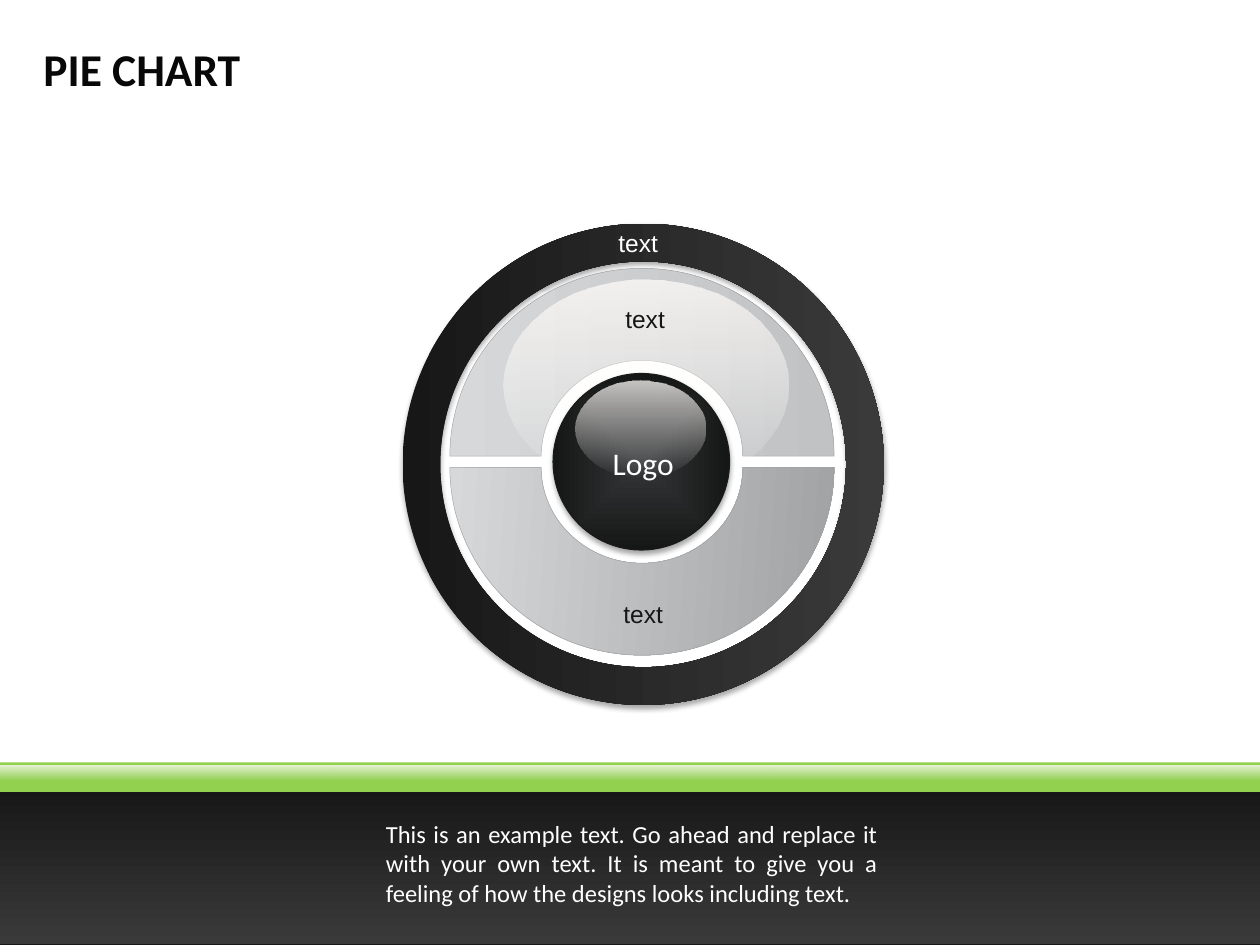
from dataclasses import dataclass

import lxml.etree
import pptx
import pptx.dml.color
import pptx.enum.shapes
import pptx.enum.text
import pptx.oxml
import pptx.oxml.ns
import pptx.util

SHAPE = pptx.enum.shapes.MSO_SHAPE
ALIGN = pptx.enum.text.PP_ALIGN
ANCHOR = pptx.enum.text.MSO_ANCHOR
AUTO_SIZE = pptx.enum.text.MSO_AUTO_SIZE
RIGHT, DOWN = 0, 90
ARC = 0.55  # control point distance of a quarter circle, as a share of its radius


@dataclass(frozen=True)
class Theme:
    white: str = "FFFFFF"
    ink: str = "151616"
    title: str = "080808"
    charcoal: str = "171717"
    graphite: str = "3A3A3A"
    core_light: str = "353637"
    core_line: str = "1A1A1A"
    silver: str = "D7D8D9"
    pale_grey: str = "C1C2C4"
    grey: str = "A0A2A4"
    green: str = "92D050"
    gloss: str = "FFFCF9"
    mist: str = "F3F3F3"
    heading: str = "Calibri"
    label: str = "Arial"
    title_size: int = 26
    logo_size: int = 18
    text_size: int = 14


THEME = Theme()


def grid(cells):
    """Length of a number of cells; the slide is 100 columns by 75 rows."""
    return pptx.util.Inches(round(cells / 10, 3))


def rgb(value):
    return pptx.dml.color.RGBColor.from_string(value)


def set_all(target, values):
    for name, value in values.items():
        setattr(target, name, value)


def add_element(parent, tag, **attributes):
    child = lxml.etree.SubElement(parent, pptx.oxml.ns.qn(tag))
    for name, value in attributes.items():
        child.set(name, str(value))
    return child


def fill_gradient(shape, stops, angle):
    """Stops are (colour, opacity in percent); an angle of None follows the shape."""
    shape.fill.gradient()
    gradient = shape._element.spPr.find(pptx.oxml.ns.qn("a:gradFill"))
    for child in list(gradient):
        gradient.remove(child)
    stop_list = add_element(gradient, "a:gsLst")
    for index, (color, opacity) in enumerate(stops):
        stop = add_element(stop_list, "a:gs", pos=index * 100000 // (len(stops) - 1))
        node = add_element(stop, "a:srgbClr", val=color)
        if opacity < 100:
            add_element(node, "a:alpha", val=opacity * 1000)
    if angle is None:
        route = add_element(gradient, "a:path", path="shape")
        add_element(route, "a:fillToRect", l=50000, t=50000, r=50000, b=50000)
    else:
        add_element(gradient, "a:lin", ang=angle * 60000, scaled=0)


def style(shape, fill, angle=RIGHT, line=None, line_width=0.75, shadow=False):
    """Fill is one colour or a sequence of gradient stops."""
    shape.shadow.inherit = False
    if isinstance(fill, str):
        shape.fill.solid()
        shape.fill.fore_color.rgb = rgb(fill)
    else:
        fill_gradient(shape, fill, angle)
    if line:
        shape.line.color.rgb = rgb(line)
        shape.line.width = pptx.util.Pt(line_width)
    else:
        shape.line.fill.background()
    if shadow:
        effects = shape._element.spPr.find(pptx.oxml.ns.qn("a:effectLst"))
        outer = add_element(effects, "a:outerShdw", blurRad=pptx.util.Pt(3.1),
                            dist=pptx.util.Pt(1.8), dir=90 * 60000, rotWithShape=0)
        add_element(add_element(outer, "a:srgbClr", val="000000"), "a:alpha", val=35000)


def add_preset(slide, kind, box, fill, **format_values):
    shape = slide.shapes.add_shape(kind, *map(grid, box))
    style(shape, fill, **format_values)
    return shape


def add_gloss(slide, kind, box, top, bottom):
    add_preset(slide, kind, box, (top, bottom), angle=DOWN)


def bend(shape, starts):
    """Turn three line segments, from each start index, into one curve."""
    segments = list(shape._element.iter(pptx.oxml.ns.qn("a:lnTo")))
    for start in starts:
        first, *others = segments[start:start + 3]
        curve = pptx.oxml.parse_xml(
            f'<a:cubicBezTo {pptx.oxml.ns.nsdecls("a")}/>')
        first.addprevious(curve)
        for segment in (first, *others):
            curve.append(segment[0])
            segment.getparent().remove(segment)


def add_half_ring(slide, center, edge, side, fill, angle):
    """Half ring above (side -1) or below (side 1) its straight edge."""
    outer, inner = (15.25, 14.9), (8, 7.6)
    quarter = ((-1, 0), (-1, ARC), (-ARC, 1), (0, 1))
    half = quarter + tuple((-x, y) for x, y in quarter[-2::-1])
    points = [(grid(center + x * width), grid(edge + side * y * height))
              for (width, height), arc in ((outer, half), (inner, half[::-1]))
              for x, y in arc]
    builder = slide.shapes.build_freeform(*points[0])
    builder.add_line_segments(points[1:], close=True)
    shape = builder.convert_to_shape()
    bend(shape, (0, 3, 7, 10))
    style(shape, fill, angle=angle, line=THEME.grey, line_width=0.25)


def write(shape, text, size, color, font, bold=False, align=ALIGN.CENTER, **frame_values):
    frame = shape.text_frame
    set_all(frame, {"word_wrap": True, **frame_values})
    paragraph = frame.paragraphs[0]
    paragraph.alignment = align
    run = paragraph.add_run()
    run.text = text
    set_all(run.font, {"size": pptx.util.Pt(size), "name": font, "bold": bold})
    run.font.color.rgb = rgb(color)
    return paragraph


def add_label(slide, box, *text_format, **format_values):
    return write(slide.shapes.add_textbox(*map(grid, box)), *text_format, **format_values)


def add_title(slide, text):
    title = slide.shapes.title
    box = map(grid, (3.45, 2.1, 93.2, 6.6))
    set_all(title, dict(zip(("left", "top", "width", "height"), box)))
    write(title, text, THEME.title_size, THEME.title, THEME.heading, bold=True,
          align=ALIGN.LEFT, vertical_anchor=ANCHOR.MIDDLE, margin_left=0, margin_right=0,
          auto_size=AUTO_SIZE.NONE)


def add_wheel(slide):
    # Outer ring
    ring = add_preset(slide, SHAPE.DONUT, (31.95, 17.75, 38.2, 38.2),
                      ((THEME.charcoal, 100), (THEME.graphite, 100)), shadow=True)
    ring.adjustments[0] = 3 / 38.2
    # Two halves of the inner ring
    for side, edge, end, angle in ((-1, 36.2, THEME.pale_grey, RIGHT),
                                   (1, 37.1, THEME.grey, 4)):
        add_half_ring(slide, 50.95, edge, side, ((THEME.silver, 100), (end, 100)), angle)
    # Core and reflections
    clear, bright = (THEME.white, 0), (THEME.gloss, 77)
    add_gloss(slide, SHAPE.OVAL, (40, 22.2, 22.6, 16.7), bright, clear)
    add_preset(slide, SHAPE.OVAL, (43.9, 29.65, 14, 14),
               ((THEME.core_light, 100), (THEME.ink, 100)),
               angle=None, line=THEME.core_line, shadow=True)
    add_gloss(slide, SHAPE.OVAL, (45.7, 30.2, 10.3, 7.6), bright, clear)
    # Labels
    add_label(slide, (43.9, 34.75, 14.3, 4), "Logo", THEME.logo_size, THEME.white,
              THEME.heading, auto_size=AUTO_SIZE.SHAPE_TO_FIT_TEXT)
    for left, top, color in ((45.8, 17.6, THEME.white), (46.35, 23.65, THEME.ink),
                             (46.2, 47.05, THEME.ink)):
        add_label(slide, (left, top, 9.7, 3.4), "text", THEME.text_size, color,
                  THEME.label, auto_size=AUTO_SIZE.SHAPE_TO_FIT_TEXT)


def add_footer(slide, text):
    add_preset(slide, SHAPE.RECTANGLE, (-0.1, 62.5, 101, 12.5),
               ((THEME.charcoal, 100), (THEME.graphite, 100)), angle=DOWN, line=THEME.charcoal)
    add_preset(slide, SHAPE.RECTANGLE, (-0.4, 60.5, 101.7, 2.35), THEME.green)
    add_gloss(slide, SHAPE.RECTANGLE, (-0.4, 60.75, 101.7, 1.1),
              (THEME.gloss, 79), (THEME.mist, 0))
    paragraph = add_label(slide, (29.65, 64.8, 41, 7.7), text, THEME.text_size, THEME.white,
                          THEME.heading, align=ALIGN.JUSTIFY, vertical_anchor=ANCHOR.BOTTOM)
    paragraph.space_before = pptx.util.Pt(0.2 * THEME.text_size)


def main():
    presentation = pptx.Presentation()
    set_all(presentation, {"slide_width": grid(100), "slide_height": grid(75)})
    slide = presentation.slides.add_slide(presentation.slide_layouts[5])
    add_title(slide, "PIE CHART")
    add_wheel(slide)
    add_footer(slide, "This is an example text. Go ahead and replace it with your own text. "
                      "It is meant to give you a feeling of how the designs looks including text.")
    presentation.save("out.pptx")


if __name__ == "__main__":
    main()
